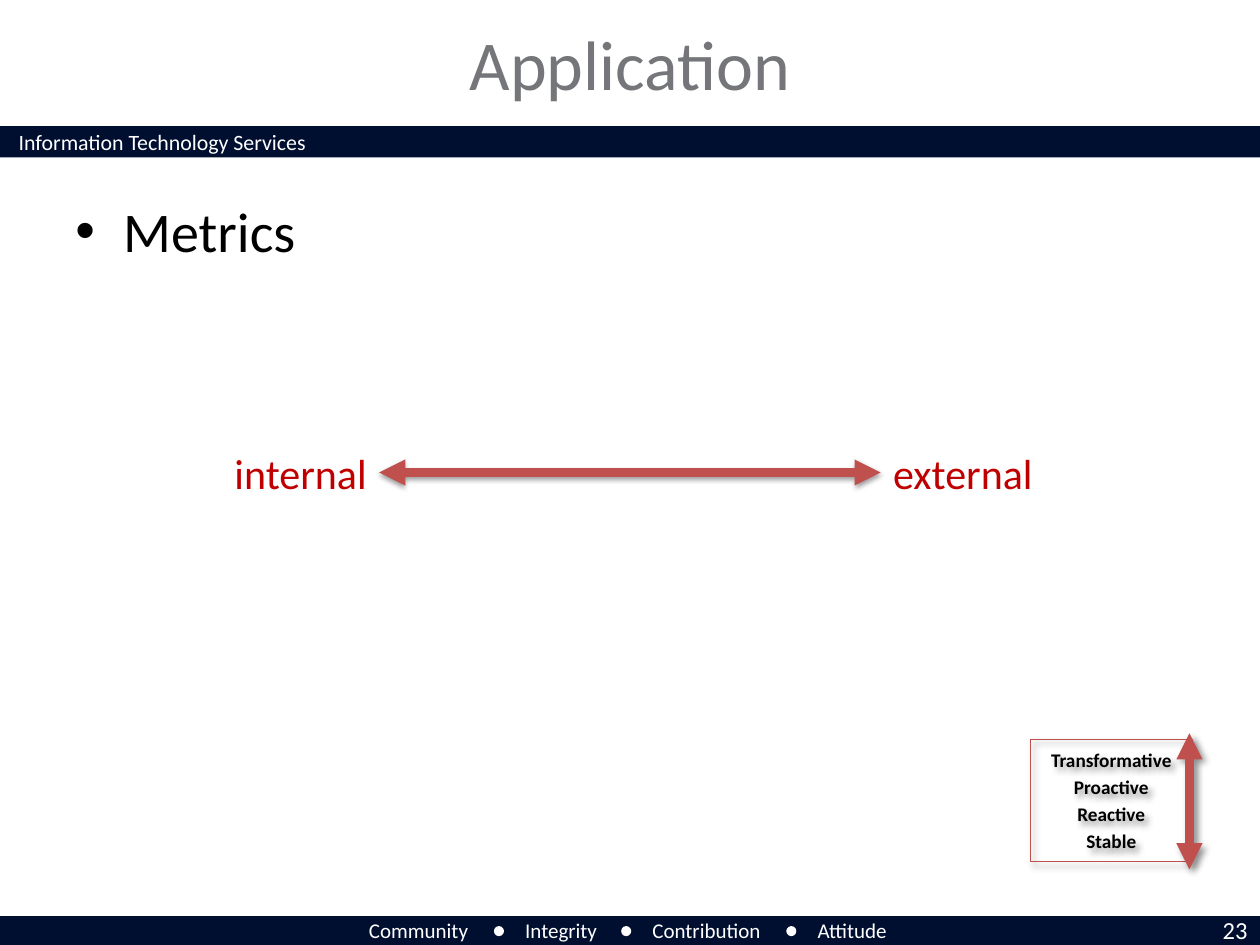
import pptx
import pptx.util
import pptx.dml.color
import pptx.enum.shapes
import pptx.enum.text
import pptx.oxml
import pptx.oxml.ns

Inches = pptx.util.Inches
Pt = pptx.util.Pt
Align = pptx.enum.text.PP_ALIGN
Anchor = pptx.enum.text.MSO_ANCHOR
Shape = pptx.enum.shapes.MSO_SHAPE

NAVY, WHITE, BLACK = "000E2F", "FFFFFF", "000000"
GRAY, RED, ARROW_RED = "747679", "C00000", "C0504D"

TITLE = "Application"
BANNER = "Information Technology Services"
BULLET = "Metrics"
PAGE_NUMBER = "23"
BAND_TOPS = [1, 7.27]
VALUES = [
    ("Community", 2.83, 1),
    ("Integrity", 4.07, 0.8),
    ("Contribution", 5.08, 1.1),
    ("Attitude", 6.39, 0.78),
]
DOT_LEFTS = [3.92, 4.93, 6.24]
LEVELS = ["Transformative", "Proactive", "Reactive", "Stable"]
SCALE_SHADOW = (40, 4, 3, 45)
SPAN_SHADOW = (38, 3.1, 1.6, 90)


def color(hex_text):
    return pptx.dml.color.RGBColor.from_string(hex_text)


def inches(*lengths):
    return [Inches(length) for length in lengths]


def write(box, lines, size, ink, align=Align.LEFT, anchor=Anchor.TOP,
          wrap=True, bold=False, gap=0):
    frame = box.text_frame
    frame.auto_size = pptx.enum.text.MSO_AUTO_SIZE.NONE
    frame.word_wrap = wrap
    frame.vertical_anchor = anchor
    for index, line in enumerate(lines):
        para = frame.add_paragraph() if index else frame.paragraphs[0]
        para.alignment = align
        if index:
            para.space_before = Pt(gap)
        span = para.add_run()
        span.text = line
        span.font.name = "Calibri"
        span.font.size = Pt(size)
        span.font.bold = bold
        span.font.color.rgb = color(ink)


def add_text(page, place, line, size, ink, **style):
    box = page.shapes.add_textbox(*inches(*place))
    write(box, [line], size, ink, **style)
    return box


def add_filled(page, kind, place, fill):
    shape = page.shapes.add_shape(kind, *inches(*place))
    shape.shadow.inherit = False
    shape.fill.solid()
    shape.fill.fore_color.rgb = color(fill)
    shape.line.fill.background()


def add_shadow(shape, opacity, blur, distance, angle):
    shape._element.spPr.append(pptx.oxml.parse_xml(
        f'<a:effectLst {pptx.oxml.ns.nsdecls("a")}>'
        f'<a:outerShdw blurRad="{Pt(blur)}" dist="{Pt(distance)}" '
        f'dir="{angle * 60000}" rotWithShape="0"><a:srgbClr val="{BLACK}">'
        f'<a:alpha val="{opacity * 1000}"/></a:srgbClr></a:outerShdw></a:effectLst>'))


def add_double_arrow(page, start, end, shadow):
    arrow = page.shapes.add_connector(
        pptx.enum.shapes.MSO_CONNECTOR.STRAIGHT, *inches(*start, *end))
    arrow.line.color.rgb = color(ARROW_RED)
    arrow.line.width = Pt(5)
    for tag in ("headEnd", "tailEnd"):
        arrow.line._get_or_add_ln().append(pptx.oxml.parse_xml(
            f'<a:{tag} {pptx.oxml.ns.nsdecls("a")} type="triangle"/>'))
    add_shadow(arrow, *shadow)
    return arrow


def add_bullet(para, indent):
    properties = para._p.get_or_add_pPr()
    properties.set("marL", str(Inches(indent)))
    properties.set("indent", str(-Inches(indent)))
    for tag, attribute, value in (("buFont", "typeface", "Arial"), ("buChar", "char", "•")):
        properties.append(pptx.oxml.parse_xml(
            f'<a:{tag} {pptx.oxml.ns.nsdecls("a")} {attribute}="{value}"/>'))


def add_frame(page):
    for top in BAND_TOPS:
        add_filled(page, Shape.RECTANGLE, (0, top, 10, 0.25), NAVY)
    add_text(page, (0.05, 0.97, 3.4, 0.32), BANNER, 12.5, WHITE)
    for value, left, width in VALUES:
        add_text(page, (left, 7.23, width, 0.3), value, 12, WHITE, wrap=False)
    for left in DOT_LEFTS:
        add_filled(page, Shape.OVAL, (left, 7.35, 0.08, 0.08), WHITE)
    add_text(page, (9.24, 7.21, 0.76, 0.34), PAGE_NUMBER, 14, WHITE, align=Align.RIGHT)


def add_content(page):
    title = page.shapes.title
    title.left, title.top, title.width, title.height = inches(1, 0.1, 8, 0.8)
    write(title, [TITLE], 40, GRAY, align=Align.CENTER, anchor=Anchor.MIDDLE)

    body = page.shapes.add_textbox(*inches(0.5, 1.51, 9, 0.74))
    add_bullet(body.text_frame.paragraphs[0], 0.38)
    write(body, [BULLET], 32, BLACK)

    external = add_text(page, (6.99, 3.5, 1.32, 0.5), "external", 24, RED, wrap=False)
    internal = add_text(page, (1.75, 3.5, 1.26, 0.5), "internal", 24, RED,
                        align=Align.RIGHT, wrap=False)
    arrow = add_double_arrow(page, (3.01, 3.75), (6.99, 3.75), SPAN_SHADOW)
    arrow.begin_connect(internal, 3)
    arrow.end_connect(external, 1)

    scale = page.shapes.add_shape(Shape.RECTANGLE, *inches(8.18, 5.87, 1.28, 0.97))
    scale.fill.background()
    scale.line.color.rgb = color(ARROW_RED)
    scale.line.width = Pt(0.75)
    add_shadow(scale, *SCALE_SHADOW)
    write(scale, LEVELS, 11, BLACK, align=Align.CENTER, anchor=Anchor.MIDDLE,
          bold=True, gap=2.2)
    add_double_arrow(page, (9.44, 5.82), (9.44, 6.9), SCALE_SHADOW)


def main():
    deck = pptx.Presentation()
    deck.slide_width, deck.slide_height = inches(10, 7.5)
    page = deck.slides.add_slide(deck.slide_layouts[5])
    add_frame(page)
    add_content(page)
    deck.save("out.pptx")


if __name__ == "__main__":
    main()
